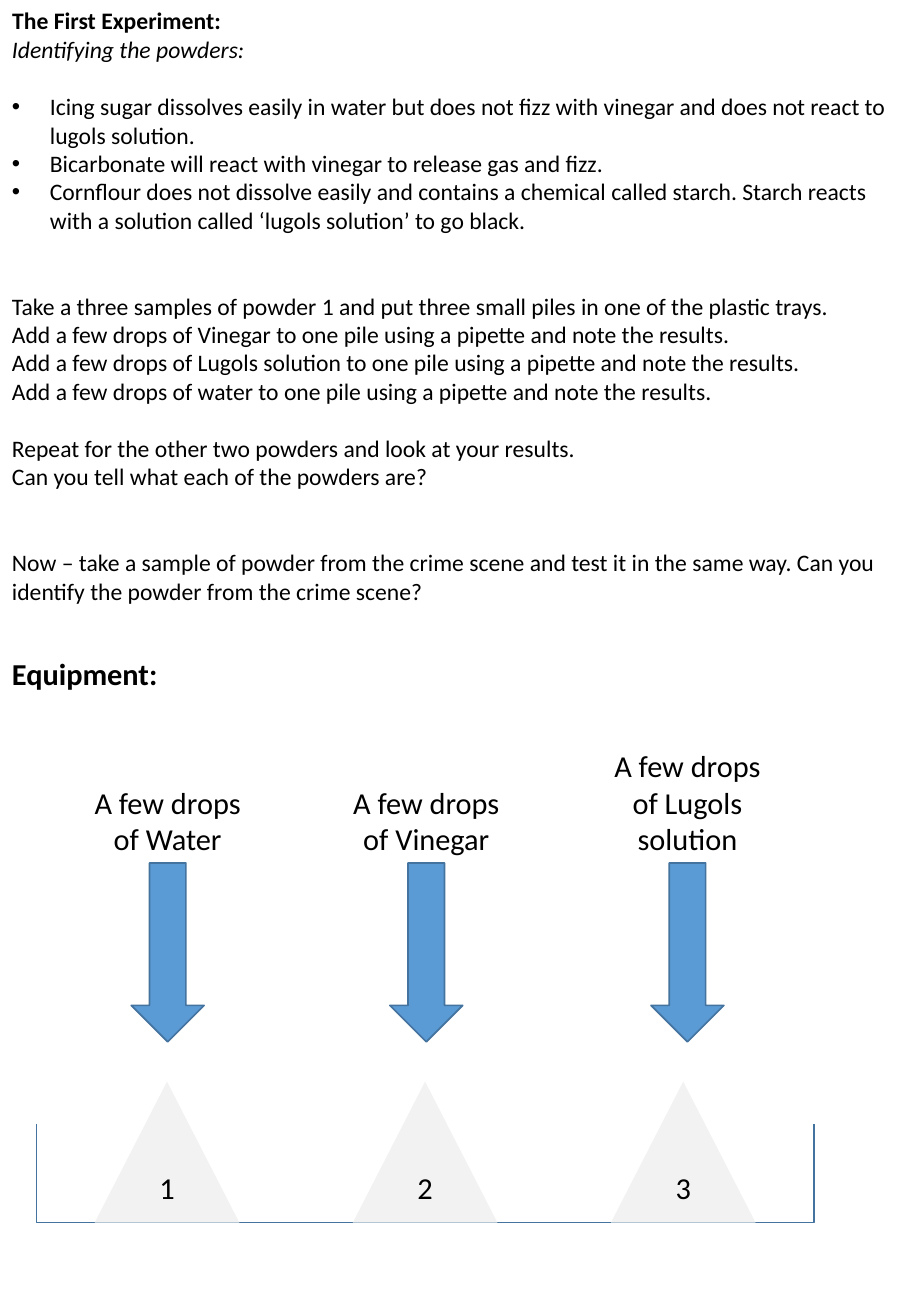
from dataclasses import dataclass

from lxml import etree
from pptx import Presentation
from pptx.dml.color import RGBColor
from pptx.enum.shapes import MSO_SHAPE
from pptx.enum.text import MSO_ANCHOR, MSO_AUTO_SIZE, PP_ALIGN
from pptx.oxml.ns import qn
from pptx.util import Pt

TRIANGLE, DOWN_ARROW = MSO_SHAPE.ISOSCELES_TRIANGLE, MSO_SHAPE.DOWN_ARROW
TOP, MIDDLE, BOTTOM = MSO_ANCHOR.TOP, MSO_ANCHOR.MIDDLE, MSO_ANCHOR.BOTTOM
LEFT, CENTER = PP_ALIGN.LEFT, PP_ALIGN.CENTER
NO_AUTOFIT = MSO_AUTO_SIZE.NONE

COLORS = {"text": "000000", "pile": "F2F2F2", "arrow": "5B9BD5", "outline": "43739E"}
FONT = "Calibri"
SLIDE_W, SLIDE_H = 540, 779.76
BODY_SIZE, LABEL_SIZE = 14, 18
LINE = 17.09  # height of one line of body text
BULLET_INDENT = 22.5

FIRST_PILE_X, PILE_PITCH = 99, 153
PILE_W, PILE_H = 85.7, 83.5
ARROW_TOP, ARROW_W, ARROW_H = 511.3, 43.2, 106
LABEL_W = 107.3
TRAY_LEFT, TRAY_RIGHT, TRAY_TOP, TRAY_BOTTOM = 21.6, 482.4, 666, 724.4


@dataclass
class Para:
    text: str
    lines_before: int = 0
    bullet: bool = False
    italic: bool = False


@dataclass
class Test:
    label: str
    drop_x: float
    label_h: float


INSTRUCTIONS = [
    Para("Identifying the powders:", italic=True),
    Para("Icing sugar dissolves easily in water but does not fizz with vinegar "
         "and does not react to lugols solution.", 1, bullet=True),
    Para("Bicarbonate will react with vinegar to release gas and fizz.", bullet=True),
    Para("Cornflour does not dissolve easily and contains a chemical called starch. "
         "Starch reacts with a solution called ‘lugols solution’ to go black.", bullet=True),
    Para("Take a three samples of powder 1 and put three small piles in one of "
         "the plastic trays.", 2),
    Para("Add a few drops of Vinegar to one pile using a pipette and note the results."),
    Para("Add a few drops of Lugols solution to one pile using a pipette and note the results."),
    Para("Add a few drops of water to one pile using a pipette and note the results."),
    Para("Repeat for the other two powders and look at your results.", 1),
    Para("Can you tell what each of the powders are?"),
    Para("Now – take a sample of powder from the crime scene and test it in the same way. "
         "Can you identify the powder from the crime scene?", 2),
]
TESTS = [
    Test("A few drops of Water", 99.4, 50.9),
    Test("A few drops of Vinegar", 252.7, 50.9),
    Test("A few drops of Lugols solution", 407.5, 72.7),
]


def color(name: str) -> RGBColor:
    return RGBColor.from_string(COLORS[name])


def add_run(p, text: str, size: float, bold=False, italic=False, align=LEFT):
    p.alignment = align
    r = p.add_run()
    r.text = text
    f = r.font
    f.name, f.size, f.bold, f.italic = FONT, Pt(size), bold, italic
    f.color.rgb = color("text")


def add_bullet(p):
    pPr = p._p.get_or_add_pPr()
    pPr.set("marL", str(Pt(BULLET_INDENT)))
    pPr.set("indent", str(-Pt(BULLET_INDENT)))
    etree.SubElement(pPr, qn("a:buFont")).set("typeface", "Arial")
    etree.SubElement(pPr, qn("a:buChar")).set("char", "•")


def add_text_box(s, x: float, y: float, w: float, h: float, anchor=TOP, wrap=True):
    tf = s.shapes.add_textbox(Pt(x), Pt(y), Pt(w), Pt(h)).text_frame
    tf.word_wrap, tf.vertical_anchor = wrap, anchor
    return tf


def add_preset(s, kind, center_x: float, y: float, w: float, h: float, fill: str):
    sp = s.shapes.add_shape(kind, Pt(center_x - w / 2), Pt(y), Pt(w), Pt(h))
    sp.shadow.inherit = False
    sp.fill.solid()
    sp.fill.fore_color.rgb = color(fill)
    sp.line.fill.background()
    return sp


def set_outline(sp):
    sp.line.color.rgb = color("outline")
    sp.line.width = Pt(1)


def set_title(s, text: str):
    sp = s.shapes.title
    sp.left, sp.top, sp.width, sp.height = Pt(0), Pt(0), Pt(SLIDE_W), Pt(24.3)
    tf = sp.text_frame
    tf.word_wrap, tf.auto_size, tf.vertical_anchor = True, NO_AUTOFIT, TOP
    add_run(tf.paragraphs[0], text, BODY_SIZE, bold=True)


def add_instructions(s):
    tf = add_text_box(s, 0, LINE, SLIDE_W, 346.5)
    for i, para in enumerate(INSTRUCTIONS):
        p = tf.add_paragraph() if i else tf.paragraphs[0]
        p.space_before = Pt(para.lines_before * LINE)
        if para.bullet:
            add_bullet(p)
        add_run(p, para.text, BODY_SIZE, italic=para.italic)


def add_tray(s):
    """Draw the tray as an outline that is open at the top."""
    builder = s.shapes.build_freeform(Pt(TRAY_LEFT), Pt(TRAY_TOP))
    corners = [(TRAY_LEFT, TRAY_BOTTOM), (TRAY_RIGHT, TRAY_BOTTOM), (TRAY_RIGHT, TRAY_TOP)]
    builder.add_line_segments([(Pt(x), Pt(y)) for x, y in corners], close=False)
    sp = builder.convert_to_shape()
    sp.shadow.inherit = False
    sp.fill.background()
    set_outline(sp)


def add_test(s, index: int, test: Test):
    """Draw a numbered pile with the arrow and label above it."""
    pile = add_preset(s, TRIANGLE, FIRST_PILE_X + index * PILE_PITCH,
                      TRAY_BOTTOM - PILE_H, PILE_W, PILE_H, "pile")
    tf = pile.text_frame
    tf.vertical_anchor = MIDDLE
    add_run(tf.paragraphs[0], str(index + 1), LABEL_SIZE, align=CENTER)

    set_outline(add_preset(s, DOWN_ARROW, test.drop_x, ARROW_TOP, ARROW_W, ARROW_H, "arrow"))

    tf = add_text_box(s, test.drop_x - LABEL_W / 2, ARROW_TOP - test.label_h,
                      LABEL_W, test.label_h, BOTTOM)
    add_run(tf.paragraphs[0], test.label, LABEL_SIZE, align=CENTER)


def main():
    prs = Presentation()
    prs.slide_width, prs.slide_height = Pt(SLIDE_W), Pt(SLIDE_H)
    s = prs.slides.add_slide(prs.slide_layouts.get_by_name("Title Only"))
    set_title(s, "The First Experiment:")
    add_instructions(s)
    tf = add_text_box(s, 0, 384.5, 101.5, 29, wrap=False)
    add_run(tf.paragraphs[0], "Equipment:", LABEL_SIZE, bold=True)
    add_tray(s)
    for i, test in enumerate(TESTS):
        add_test(s, i, test)
    prs.save("out.pptx")


if __name__ == "__main__":
    main()
